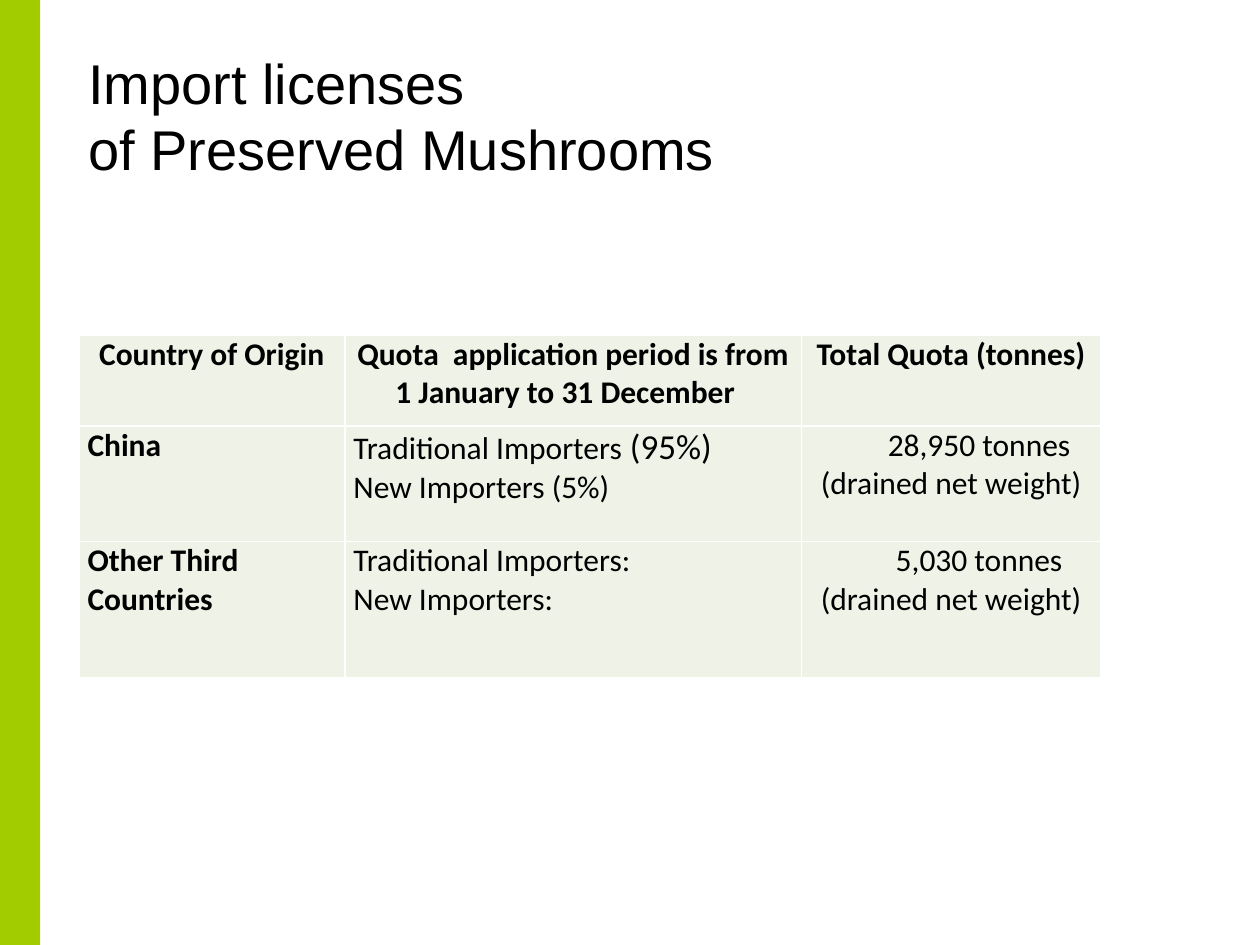
from lxml import etree
from pptx import Presentation
from pptx.dml.color import RGBColor
from pptx.enum.shapes import MSO_SHAPE
from pptx.enum.text import MSO_ANCHOR, PP_ALIGN
from pptx.oxml.ns import qn
from pptx.util import Pt

RECT = MSO_SHAPE.RECTANGLE
TOP = MSO_ANCHOR.TOP
LEFT, MID = PP_ALIGN.LEFT, PP_ALIGN.CENTER

TITLE = "Import licenses\vof Preserved Mushrooms"
ROWS = [
    [["Country of Origin"],
     ["Quota  application period is from", "1 January to 31 December"],
     ["Total Quota (tonnes)"]],
    [["China"],
     [("Traditional Importers", " (95%)"), "New Importers (5%)"],
     ["28,950 tonnes", "(drained net weight)"]],
    [["Other Third Countries"],
     ["Traditional Importers:", "New Importers:"],
     ["5,030 tonnes", "(drained net weight)"]],
]
INDENTS = {
    "1 January to 31 December": ("marR", 9),
    "28,950 tonnes": ("marL", 32),
    "5,030 tonnes": ("marL", 32),
}
SIZES = {" (95%)": 20}
WIDTHS = [152, 261, 171]
HEIGHTS = [52, 66, 78]
BLACK, WHITE, GREEN, PALE = "000000", "FFFFFF", "A3CC00", "EEF2E7"


def paint(fill, color):
    fill.solid()
    fill.fore_color.rgb = RGBColor.from_string(color)


def style(font, name, size, bold=False):
    font.name = name
    font.size = Pt(size)
    font.bold = bold
    font.color.rgb = RGBColor.from_string(BLACK)


def edge(cell, color, width):
    props = cell._tc.get_or_add_tcPr()
    for tag in ("a:lnL", "a:lnR", "a:lnT", "a:lnB"):
        line = etree.SubElement(props, qn(tag), w=str(Pt(width)))
        fill = etree.SubElement(line, qn("a:solidFill"))
        etree.SubElement(fill, qn("a:srgbClr"), val=color)


def write(cell, lines, align, bold):
    frame = cell.text_frame
    for i, line in enumerate(lines):
        para = frame.add_paragraph() if i else frame.paragraphs[0]
        para.alignment = align
        if line in INDENTS:
            side, gap = INDENTS[line]
            para._p.get_or_add_pPr().set(side, str(Pt(gap)))
        for part in (line if isinstance(line, tuple) else (line,)):
            run = para.add_run()
            run.text = part
            style(run.font, "Calibri", SIZES.get(part, 18), bold)


def add_title(slide):
    title = slide.shapes.title
    title.left, title.top = Pt(50.5), Pt(28)
    title.width, title.height = Pt(644), Pt(88)
    frame = title.text_frame
    frame.margin_left = frame.margin_right = 0
    frame.margin_top = frame.margin_bottom = 0
    frame.vertical_anchor = TOP
    frame.word_wrap = True
    frame.text = TITLE
    para = frame.paragraphs[0]
    para.alignment = LEFT
    para.line_spacing = Pt(38)
    for run in para.runs:
        style(run.font, "Arial", 32)


def add_quotas(slide):
    table = slide.shapes.add_table(
        len(HEIGHTS), len(WIDTHS), Pt(45), Pt(191.5),
        Pt(sum(WIDTHS)), Pt(sum(HEIGHTS))).table
    table.first_row = table.horz_banding = False
    for col, width in zip(table.columns, WIDTHS):
        col.width = Pt(width)
    for r, (row, height) in enumerate(zip(ROWS, HEIGHTS)):
        table.rows[r].height = Pt(height)
        for c, lines in enumerate(row):
            cell = table.cell(r, c)
            cell.margin_left = cell.margin_right = Pt(5)
            cell.margin_top = cell.margin_bottom = 0
            cell.vertical_anchor = TOP
            edge(cell, WHITE, 1)
            paint(cell.fill, PALE)
            align = MID if r == 0 or c == 2 else LEFT
            write(cell, lines, align, r == 0 or c == 0)


def main():
    deck = Presentation()
    deck.slide_width, deck.slide_height = Pt(720), Pt(540)
    slide = deck.slides.add_slide(deck.slide_layouts[5])
    bar = slide.shapes.add_shape(RECT, 0, 0, Pt(23), Pt(540))
    bar.shadow.inherit = False
    paint(bar.fill, GREEN)
    bar.line.fill.background()
    add_title(slide)
    add_quotas(slide)
    deck.save("out.pptx")


if __name__ == "__main__":
    main()
